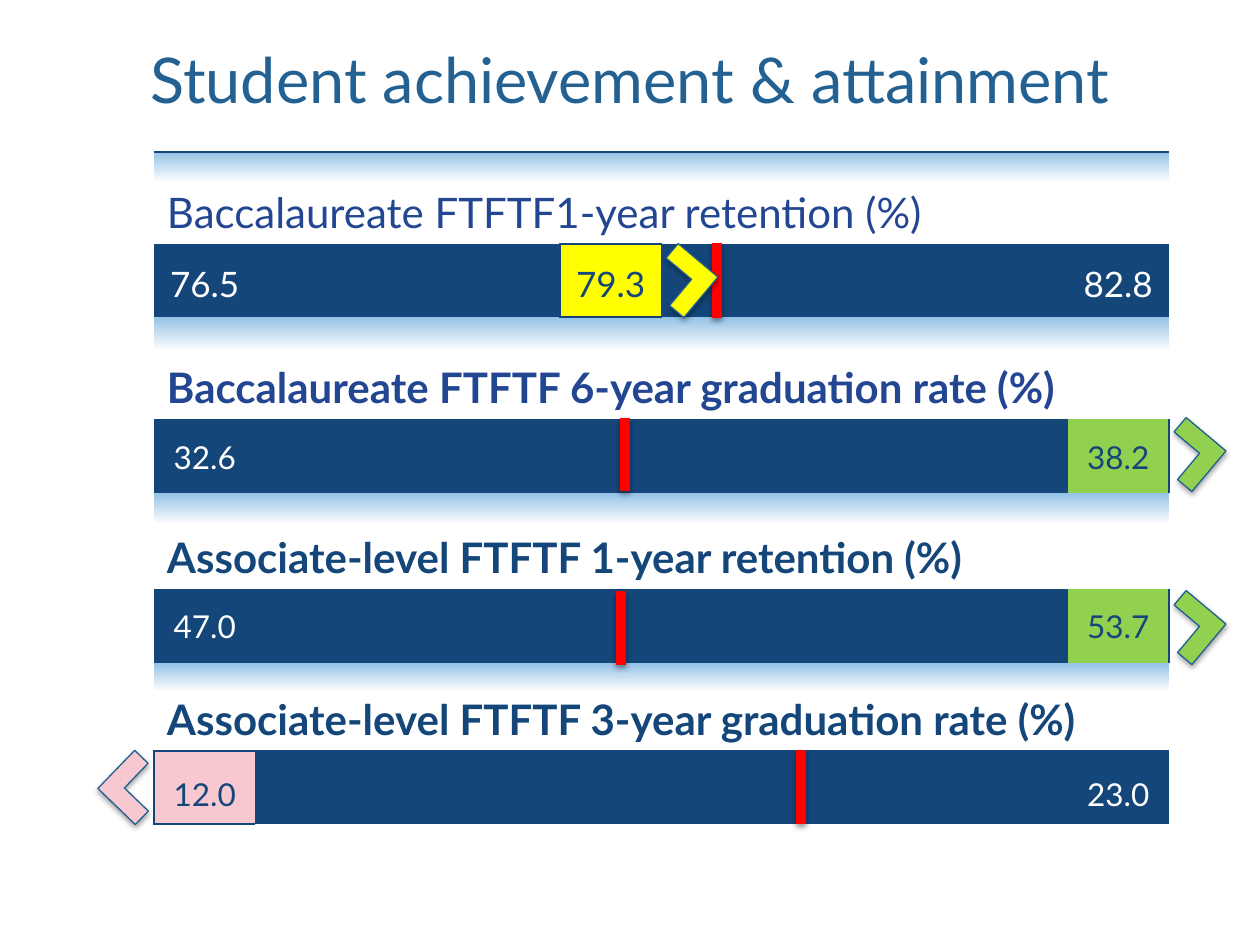
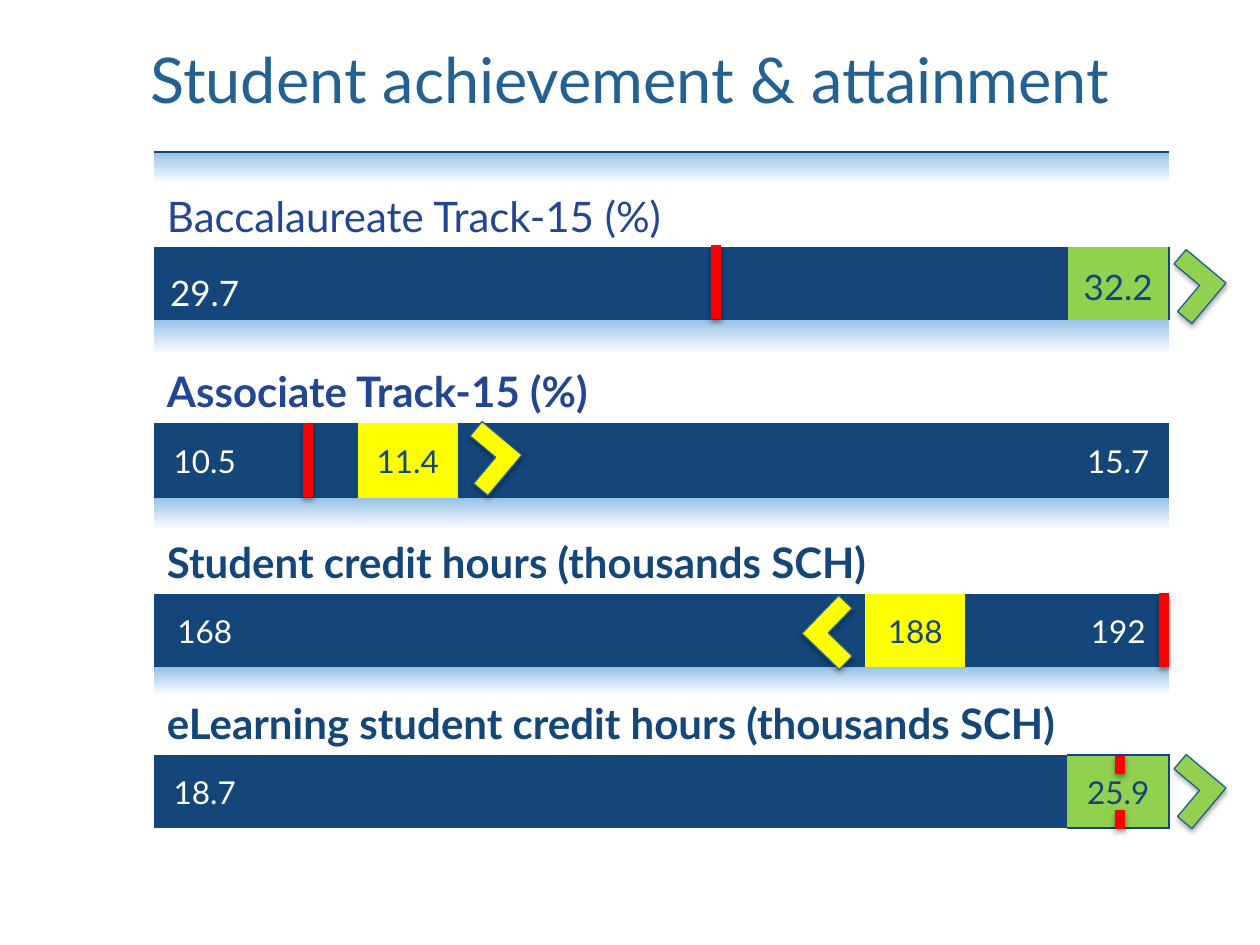
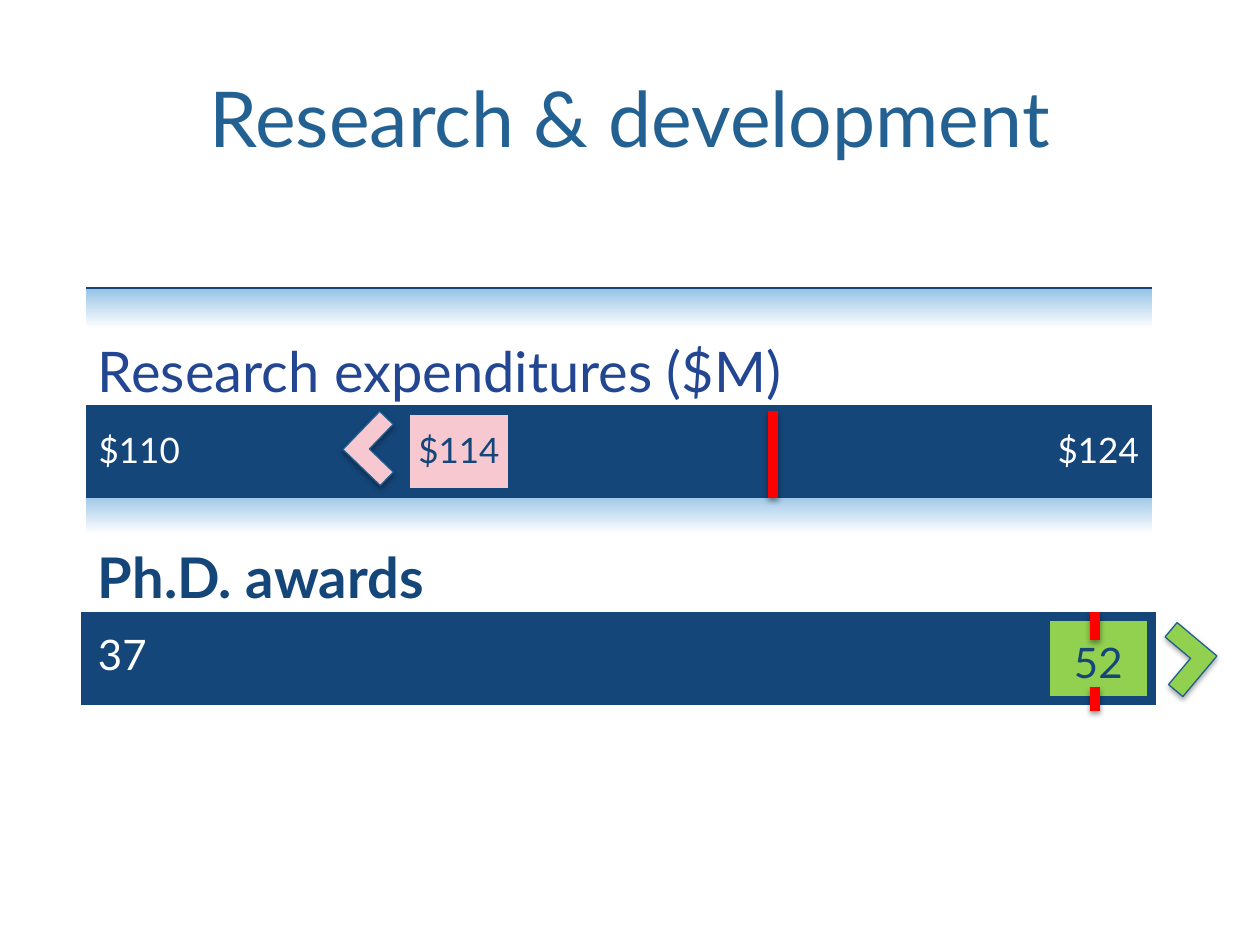
from dataclasses import dataclass

from lxml.etree import SubElement
from pptx import Presentation
from pptx.dml.color import RGBColor
from pptx.enum.shapes import MSO_CONNECTOR, MSO_SHAPE
from pptx.enum.text import MSO_ANCHOR, PP_ALIGN
from pptx.oxml.ns import qn
from pptx.util import Emu, Pt

EMU_PER_INCH = 914400
PX_PER_INCH = 126
COLUMNS = 10
LAST = COLUMNS - 1
NO_STYLE = "{2D5ABB26-0587-4C30-8999-92F81FD0307C}"
TURN = {"left": 44, "right": 220}


@dataclass(frozen=True)
class Theme:
    font: str = "Lato"
    title: str = "236192"
    navy: str = "14467A"
    heading: str = "234692"
    outline: str = "205F91"
    fade: str = "95C2E6"
    white: str = "FFFFFF"
    target: str = "FF0000"
    below: str = "F7C8CF"
    within: str = "FFFF00"
    above: str = "92D050"
    title_large: int = 44
    title_size: int = 36
    heading_large: int = 32
    heading_size: int = 24
    value_large: int = 20
    value_size: int = 18


THEME = Theme()


@dataclass
class Measure:
    heading: str
    heights: tuple
    values: dict
    marked: int
    fill: str
    chevron: tuple
    targets: list
    heading_color: str = THEME.navy
    bold: bool = True
    size: int = THEME.value_size
    inset: int = 19
    low_align: PP_ALIGN = PP_ALIGN.CENTER
    low_anchor: MSO_ANCHOR = MSO_ANCHOR.TOP
    marked_anchor: MSO_ANCHOR = MSO_ANCHOR.TOP
    marked_sides: str = "LR"
    open_ends: bool = False


def px(length):
    return Emu(round(length * EMU_PER_INCH / PX_PER_INCH))


def rgb(color):
    return RGBColor.from_string(color)


def write(frame, text, *, size, color, bold=False, align=PP_ALIGN.LEFT):
    para = frame.paragraphs[0]
    para.alignment = align
    span = para.add_run()
    span.text = text
    span.font.name = THEME.font
    span.font.size = Pt(size)
    span.font.bold = bold
    span.font.color.rgb = rgb(color)


def add_title(page, text, *, top, size):
    box = page.shapes.title
    box.left, box.top, box.width, box.height = px(63), px(top), px(1134), px(157)
    box.text_frame.vertical_anchor = MSO_ANCHOR.MIDDLE
    write(box.text_frame, text, size=size, color=THEME.title, align=PP_ALIGN.CENTER)


def add_shadow(item, *, opacity, distance):
    effects = SubElement(item.element.spPr, qn("a:effectLst"))
    shadow = SubElement(effects, qn("a:outerShdw"), blurRad=str(Pt(3.1)),
                        dist=str(Pt(distance)), dir="5400000", rotWithShape="0")
    black = SubElement(shadow, qn("a:srgbClr"), val="000000")
    SubElement(black, qn("a:alpha"), val=str(opacity * 1000))


def add_chevron(page, left, top, direction, fill):
    chevron = page.shapes.add_shape(MSO_SHAPE.CORNER, px(left), px(top), px(52), px(53))
    chevron.adjustments[0] = chevron.adjustments[1] = 0.36
    chevron.rotation = TURN[direction]
    chevron.fill.solid()
    chevron.fill.fore_color.rgb = rgb(fill)
    chevron.line.color.rgb = rgb(THEME.outline)
    chevron.line.width = Pt(0.75)
    add_shadow(chevron, opacity=35, distance=1.8)


def add_target(page, x, top, bottom):
    target = page.shapes.add_connector(MSO_CONNECTOR.STRAIGHT, px(x), px(top), px(x), px(bottom))
    target.line.color.rgb = rgb(THEME.target)
    target.line.width = Pt(6)
    add_shadow(target, opacity=38, distance=1.6)


def set_borders(cell, sides, width):
    properties = cell._tc.get_or_add_tcPr()
    for side in sides:
        line = SubElement(properties, qn(f"a:ln{side}"), w=str(Pt(width)), cmpd="sng")
        solid = SubElement(line, qn("a:solidFill"))
        SubElement(solid, qn("a:srgbClr"), val=THEME.navy)


def set_insets(cell, *, top, side):
    cell.margin_left = cell.margin_right = px(side)
    cell.margin_top, cell.margin_bottom = px(top), px(6)


def fill_heading(cells, measure, *, size, inset, side, first):
    if first:
        for cell in cells:
            set_borders(cell, "T", 1)
    cell = cells[0]
    cell.merge(cells[LAST])
    set_insets(cell, top=6 if first else inset, side=side)
    cell.vertical_anchor = MSO_ANCHOR.BOTTOM
    cell.fill.gradient()
    cell.fill.gradient_angle = 90
    for stop, position, color in zip(cell.fill.gradient_stops, (0.67, 1), (THEME.white, THEME.fade)):
        stop.position = position
        stop.color.rgb = rgb(color)
    write(cell.text_frame, measure.heading, size=size, color=measure.heading_color,
          bold=measure.bold)


def grid_sides(column, open_ends):
    if open_ends and column == 0:
        return "RTB"
    if open_ends and column == LAST:
        return "LTB"
    return "LRTB"


def fill_bar(cells, measure, *, side, grid):
    for column, cell in enumerate(cells):
        marked = column == measure.marked
        if grid:
            set_borders(cell, grid_sides(column, measure.open_ends), 6)
        elif marked:
            set_borders(cell, measure.marked_sides, 1)
        cell.fill.solid()
        cell.fill.fore_color.rgb = rgb(measure.fill if marked else THEME.navy)
        if column not in measure.values:
            continue
        set_insets(cell, top=measure.inset, side=side)
        low = column == 0
        cell.vertical_anchor = (measure.marked_anchor if marked
                                else measure.low_anchor if low else MSO_ANCHOR.TOP)
        write(cell.text_frame, measure.values[column], size=measure.size,
              color=THEME.navy if marked else THEME.white,
              align=measure.low_align if low else PP_ALIGN.CENTER)


def add_scorecard(page, measures, *, left, top, width, heading_size=THEME.heading_size,
                  heading_inset=25, side=13, grid=False):
    heights = [height for measure in measures for height in measure.heights]
    frame = page.shapes.add_table(len(heights), COLUMNS, px(left), px(top),
                                  px(width), px(sum(heights)))
    for style in frame.element.iter(qn("a:tableStyleId")):
        style.text = NO_STYLE
    table = frame.table
    table.first_row = table.horz_banding = False
    for column in table.columns:
        column.width = px(width / COLUMNS)
    for row, height in zip(table.rows, heights):
        row.height = px(height)
    rows = [list(row.cells) for row in table.rows]
    for index, measure in enumerate(measures):
        fill_heading(rows[2 * index], measure, size=heading_size,
                     inset=heading_inset, side=side, first=index == 0)
        fill_bar(rows[2 * index + 1], measure, side=side, grid=grid)
    for measure in measures:
        for target in measure.targets:
            add_target(page, *target)
        add_chevron(page, *measure.chevron, measure.fill)


ACHIEVEMENT = [
    Measure("Baccalaureate FTFTF1-year retention (%)", (92, 73),
            {0: "76.5", 4: "79.3", 9: "82.8"}, 4, THEME.within,
            (655, 254, "right"), [(717, 243, 318)], heading_color=THEME.heading,
            bold=False, size=THEME.value_large, marked_sides="LRT"),
    Measure("Baccalaureate FTFTF 6-year graduation rate (%)", (102, 74),
            {0: "32.6", 9: "38.2"}, 9, THEME.above,
            (1163, 428, "right"), [(625, 418, 491)], heading_color=THEME.heading),
    Measure("Associate-level FTFTF 1-year retention (%)", (96, 74),
            {0: "47.0", 9: "53.7"}, 9, THEME.above,
            (1163, 601, "right"), [(621, 591, 665)]),
    Measure("Associate-level FTFTF 3-year graduation rate (%)", (88, 73),
            {0: "12.0", 9: "23.0"}, 0, THEME.below,
            (109, 761, "left"), [(801, 750, 824)], inset=25, marked_sides="LTB"),
]

ATTAINMENT = [
    Measure("Baccalaureate Track-15 (%)", (95, 73),
            {0: "29.7", 9: "32.2"}, 9, THEME.above,
            (1163, 260, "right"), [(716, 245, 319)],
            heading_color=THEME.heading, bold=False, size=THEME.value_large,
            low_anchor=MSO_ANCHOR.BOTTOM),
    Measure("Associate Track-15 (%)", (103, 75),
            {0: "10.5", 2: "11.4", 9: "15.7"}, 2, THEME.within,
            (459, 432, "right"), [(308, 423, 497)], heading_color=THEME.heading),
    Measure("Student credit hours (thousands SCH)", (96, 73),
            {0: "168", 7: "188", 9: "192"}, 7, THEME.within,
            (813, 606, "left"), [(1164, 593, 667)]),
    Measure("eLearning student credit hours (thousands SCH)", (88, 73),
            {0: "18.7", 9: "25.9"}, 9, THEME.above,
            (1163, 765, "right"), [(1120, 756, 774), (1120, 810, 829)], marked_sides="RTB"),
]

RESEARCH = [
    Measure("Research expenditures ($M)", (122, 83),
            {0: "$110", 3: "$114", 9: "$124"}, 3, THEME.below,
            (354, 422, "left"), [(773, 411, 498)],
            heading_color=THEME.heading, bold=False, size=THEME.value_large, open_ends=True),
    Measure("Ph.D. awards", (115, 84), {0: "37", 9: "52"}, 9, THEME.above,
            (1154, 633, "right"), [(1095, 612, 640), (1095, 687, 711)],
            size=THEME.heading_size, inset=13, low_align=PP_ALIGN.LEFT,
            marked_anchor=MSO_ANCHOR.MIDDLE),
]


def main():
    deck = Presentation()
    deck.slide_width, deck.slide_height = px(1260), px(945)
    title_only = deck.slide_layouts[5]

    for measures in (ACHIEVEMENT, ATTAINMENT):
        page = deck.slides.add_slide(title_only)
        add_title(page, "Student achievement & attainment", top=0, size=THEME.title_size)
        add_scorecard(page, measures, left=154, top=152, width=1015)

    page = deck.slides.add_slide(title_only)
    add_title(page, "Research & development", top=38, size=THEME.title_large)
    add_scorecard(page, RESEARCH, left=86, top=288, width=1066,
                  heading_size=THEME.heading_large, heading_inset=50, side=12, grid=True)

    deck.save("out.pptx")


if __name__ == "__main__":
    main()
